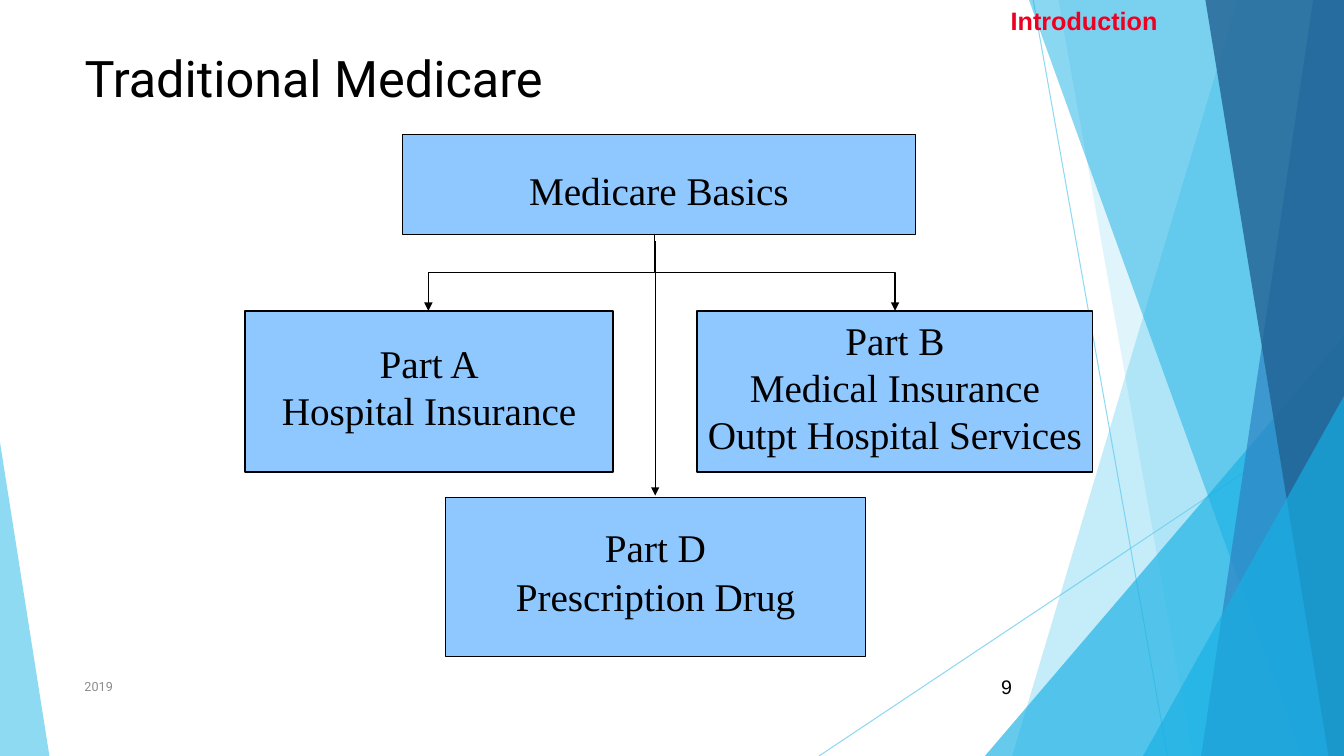
from lxml import etree
from pptx import Presentation
from pptx.dml.color import RGBColor
from pptx.enum.shapes import MSO_CONNECTOR, MSO_SHAPE
from pptx.enum.text import MSO_ANCHOR, PP_ALIGN
from pptx.oxml.ns import qn
from pptx.util import Pt

LEFT, CENTER, RIGHT = PP_ALIGN.LEFT, PP_ALIGN.CENTER, PP_ALIGN.RIGHT
TOP, MIDDLE = MSO_ANCHOR.TOP, MSO_ANCHOR.MIDDLE
RECT, PROCESS = MSO_SHAPE.RECTANGLE, MSO_SHAPE.FLOWCHART_PROCESS
TRIANGLE = MSO_SHAPE.ISOSCELES_TRIANGLE
STRAIGHT, ELBOW = MSO_CONNECTOR.STRAIGHT, MSO_CONNECTOR.ELBOW

WIDE, HIGH = 960, 540
COLORS = {
    "black": "000000",
    "gray": "8C8C8C",
    "red": "ED0123",
    "box": "8FC7FF",
    "sky": "5FCBEF",
    "cyan": "17B0E4",
    "blue": "2E83C3",
    "navy": "226292",
}


def paint(fill, color, alpha=100):
    fill.solid()
    fill.fore_color.rgb = RGBColor.from_string(COLORS[color])
    if alpha < 100:
        node = fill._xPr.find(qn("a:solidFill"))[0]
        etree.SubElement(node, qn("a:alpha"), val=str(alpha * 1000))


def write(frame, lines, size, font, color="black", align=LEFT, bold=False):
    frame.text = "\n".join(lines)
    for para in frame.paragraphs:
        para.alignment = align
        for run in para.runs:
            run.font.size = Pt(size)
            run.font.name = font
            run.font.bold = bold
            run.font.color.rgb = RGBColor.from_string(COLORS[color])


def label(slide, area, text, size, font, color="black", align=LEFT,
          anchor=TOP, bold=False):
    frame = slide.shapes.add_textbox(*map(Pt, area)).text_frame
    frame.word_wrap = True
    frame.vertical_anchor = anchor
    write(frame, [text], size, font, color, align, bold)


def box(slide, kind, area, lines, top, bottom, width=1):
    shape = slide.shapes.add_shape(kind, *map(Pt, area))
    shape.shadow.inherit = False
    paint(shape.fill, "box")
    paint(shape.line.fill, "black")
    shape.line.width = Pt(width)
    frame = shape.text_frame
    frame.word_wrap = False
    frame.vertical_anchor = MIDDLE
    frame.margin_top, frame.margin_bottom = Pt(top), Pt(bottom)
    write(frame, lines, 28, "Times New Roman", align=CENTER)
    return frame


def line(slide, kind, start, end, color="black", width=0.75, alpha=100,
         arrow=False):
    link = slide.shapes.add_connector(kind, *map(Pt, start + end))
    paint(link.line.fill, color, alpha)
    link.line.width = Pt(width)
    if arrow:
        etree.SubElement(link.line._get_or_add_ln(), qn("a:tailEnd"),
                         type="triangle")
    etree.SubElement(link._element.spPr, qn("a:effectLst"))
    return link


def branch(slide, start, end, bend):
    (x1, y1), (x2, y2) = start, end
    midx, midy = (x1 + x2) / 2, (y1 + y2) / 2
    half, tall = (y2 - y1) / 2, abs(x2 - x1) / 2
    side = 1 if x2 > x1 else -1
    link = line(slide, ELBOW, (midx + side * half, midy - tall),
                (midx - side * half, midy + tall), width=1, arrow=True)
    props = link._element.spPr
    turn = 270 if side > 0 else 90
    props.find(qn("a:xfrm")).set("rot", str(turn * 60000))
    geom = props.find(qn("a:prstGeom"))
    guides = geom.find(qn("a:avLst"))
    if guides is None:
        guides = etree.SubElement(geom, qn("a:avLst"))
    etree.SubElement(guides, qn("a:gd"), name="adj1",
                     fmla=f"val {round(bend * 100000)}")


def facet(slide, top, base, color, alpha):
    pen = slide.shapes.build_freeform(top, 0, scale=Pt(1))
    pen.add_line_segments([(WIDE, 0), (WIDE, HIGH), (base, HIGH)], close=True)
    finish(pen.convert_to_shape(), color, alpha)


def wedge(slide, left, top, width, tip, color, alpha):
    area = left, top, width, HIGH - top
    shape = slide.shapes.add_shape(TRIANGLE, *map(Pt, area))
    shape.adjustments[0] = tip
    finish(shape, color, alpha)


def finish(shape, color, alpha):
    shape.shadow.inherit = False
    shape.line.fill.background()
    paint(shape.fill, color, alpha)


def decor(slide):
    line(slide, STRAIGHT, (738, 0), (834, HIGH), "sky", alpha=70)
    line(slide, STRAIGHT, (WIDE, 290), (585, HIGH), "sky", alpha=70)
    facet(slide, 884, 723, "sky", 36)
    facet(slide, 756, 852, "sky", 20)
    wedge(slide, 703.5, 240, 256.5, 1, "cyan", 66)
    facet(slide, 735, 930, "cyan", 50)
    facet(slide, 938, 858, "blue", 70)
    facet(slide, 861, 949, "navy", 80)
    wedge(slide, 816.5, 283, 143.5, 1, "cyan", 66)
    wedge(slide, 0, 316, 35.3, 0, "sky", 70)


def chart(slide):
    box(slide, PROCESS, (287.4, 96, 366.5, 71.4), ["Medicare Basics"],
        18, 10.8)
    box(slide, PROCESS, (175, 222, 263, 115),
        ["Part A", "Hospital Insurance"], 2, 9)
    box(slide, PROCESS, (498, 222, 282.5, 115),
        ["Part B", "Medical Insurance", "Outpt Hospital Services"], 2, 9)
    branch(slide, (467.3, 167.5), (306, 222), 0.5)
    branch(slide, (468, 172), (639.3, 222), 0.45)
    line(slide, STRAIGHT, (468, 180), (468, 354), arrow=True)
    drug = box(slide, RECT, (318.2, 355.3, 300, 113.8),
               ["Part D", "Prescription Drug"], 10.8, 14.4, 0.75)
    drug.word_wrap = True
    for para in drug.paragraphs:
        para.line_spacing = 0.9
        para.space_after = Pt(5)
    props = drug.paragraphs[1]._p.get_or_add_pPr()
    props.set("marL", "0")
    props.set("indent", str(-Pt(14)))


def main():
    deck = Presentation()
    deck.slide_width, deck.slide_height = Pt(WIDE), Pt(HIGH)
    slide = deck.slides.add_slide(deck.slide_layouts[6])
    decor(slide)
    label(slide, (53.3, 30, 677, 122), "Traditional Medicare", 36, "Roboto")
    label(slide, (676, 476, 54, 29), "9", 14, "Arial", align=RIGHT,
          anchor=MIDDLE)
    chart(slide)
    label(slide, (635, 0, 199, 29), "Introduction", 18, "Arial", "red",
          RIGHT, bold=True)
    label(slide, (53.3, 476, 496, 29), "2019", 9, "Roboto", "gray",
          anchor=MIDDLE)
    deck.save("out.pptx")


if __name__ == "__main__":
    main()
